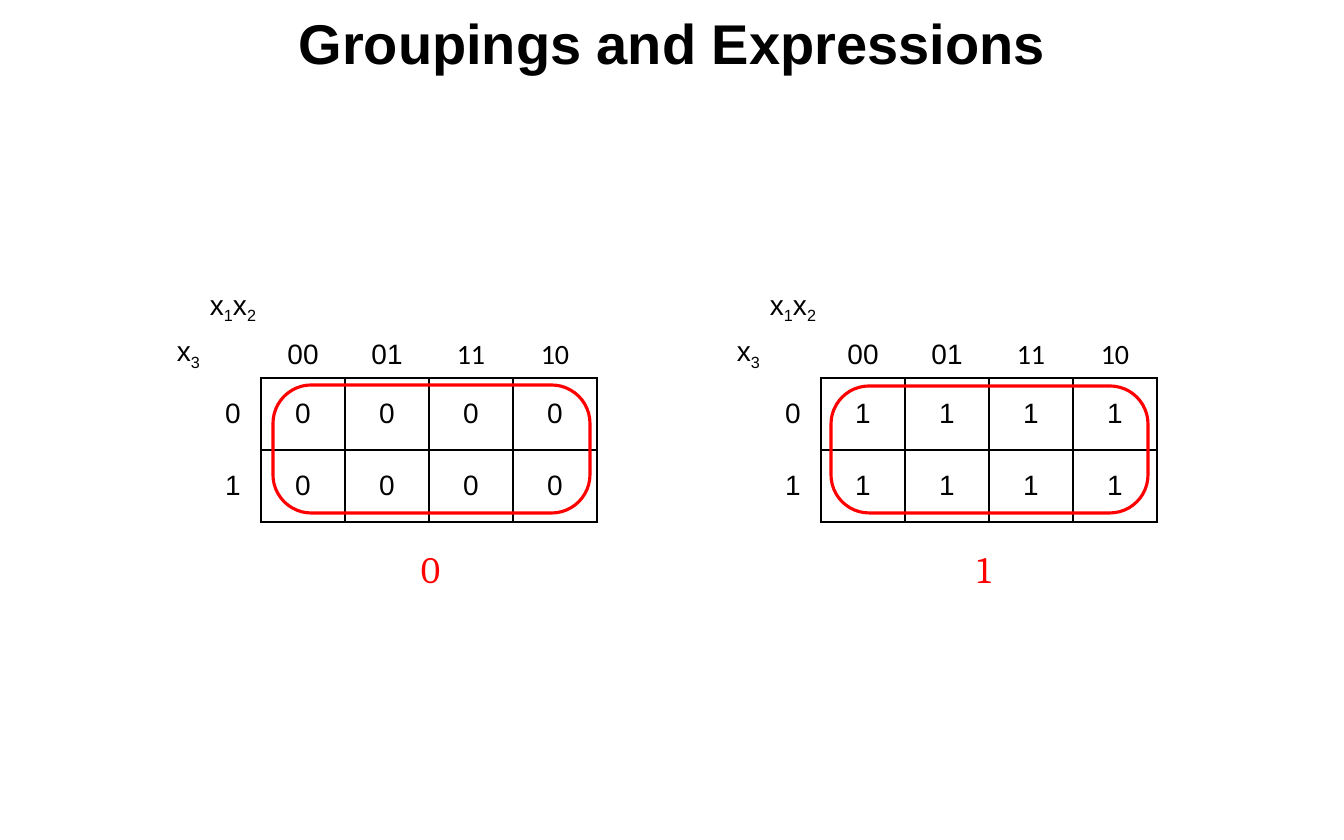
"""Build the slide of two Karnaugh maps whose groupings cover every cell."""
import dataclasses
import typing

import lxml.etree
import pptx
import pptx.dml.color
import pptx.enum.shapes
import pptx.enum.text
import pptx.oxml.ns
import pptx.util

SCALE = 914400 / 112
BLACK = pptx.dml.color.RGBColor(0, 0, 0)
WHITE = pptx.dml.color.RGBColor(255, 255, 255)
RED = pptx.dml.color.RGBColor(255, 0, 0)
CENTER = pptx.enum.text.PP_ALIGN.CENTER
MIDDLE = pptx.enum.text.MSO_ANCHOR.MIDDLE

COLUMN_WIDTHS = (56, 56, 84, 84, 84, 84)
ROW_HEIGHTS = (47, 47, 72, 72)
MAP_TOP = 284
FIRST_ROW = FIRST_COLUMN = 2
X3_INDENT = 23
NO_MARGINS = {"margin_left": 0, "margin_top": 0, "margin_right": 0, "margin_bottom": 0}
NEIGHBOURS = {"lnL": (0, -1), "lnR": (0, 1), "lnT": (-1, 0), "lnB": (1, 0)}


class Box(typing.NamedTuple):
    """Hold a position and size in px."""
    left: int
    top: int
    width: int
    height: int


@dataclasses.dataclass(frozen=True)
class KarnaughMap:
    """Describe a map filled with one value, its grouping and its expression."""
    value: str
    left: int
    grouping: Box
    expression: Box


MAPS = (
    KarnaughMap("0", 149, Box(273, 385, 317, 128), Box(410, 541, 41, 57)),
    KarnaughMap("1", 709, Box(831, 386, 317, 127), Box(966, 541, 41, 57)),
)


def px(length: int) -> pptx.util.Emu:
    """Turn px into EMU."""
    return pptx.util.Emu(round(length * SCALE))


def apply(target: typing.Any, values: dict[str, typing.Any]) -> None:
    """Set every attribute named in the format values."""
    for name, value in values.items():
        setattr(target, name, value)


def add_run(paragraph: typing.Any, text: str, font_name: str, points: int,
            color: pptx.dml.color.RGBColor, bold: bool = False) -> typing.Any:
    """Append a formatted run."""
    run = paragraph.add_run()
    run.text = text
    apply(run.font, {"name": font_name, "size": pptx.util.Pt(points), "bold": bold})
    run.font.color.rgb = color
    return run


def add_label(paragraph: typing.Any, label: str, font_name: str) -> None:
    """Write a cell label, lowering the digits of variable names."""
    is_variable = label.startswith("x")
    for part in label if is_variable else (label,):
        run = add_run(paragraph, part, font_name, 18, BLACK)
        if is_variable and part.isdigit():
            run.font._element.set("baseline", "-25000")


def is_value_cell(row: int, column: int) -> bool:
    """Tell whether a place lies inside the framed value grid."""
    return (FIRST_ROW <= row < len(ROW_HEIGHTS)
            and FIRST_COLUMN <= column < len(COLUMN_WIDTHS))


def add_borders(cell: typing.Any, row: int, column: int) -> None:
    """Draw black edges around value cells and white edges elsewhere."""
    properties = cell._tc.get_or_add_tcPr()
    for tag, (row_step, column_step) in NEIGHBOURS.items():
        neighbour = (row + row_step, column + column_step)
        framed = is_value_cell(row, column) or is_value_cell(*neighbour)
        points = 3 if {row, neighbour[0]} == {0, 1} else 1
        line = lxml.etree.SubElement(properties, pptx.oxml.ns.qn(f"a:{tag}"),
                                     w=str(pptx.util.Pt(points)))
        fill = lxml.etree.SubElement(line, pptx.oxml.ns.qn("a:solidFill"))
        lxml.etree.SubElement(fill, pptx.oxml.ns.qn("a:srgbClr"),
                              val=str(BLACK if framed else WHITE))


def add_map_table(slide: typing.Any, karnaugh_map: KarnaughMap) -> None:
    """Add the table with variable names, codes and values."""
    labels = (
        ("", "x1x2", "", "", "", ""),
        ("x3", "", "00", "01", "11", "10"),
        ("", "0", *karnaugh_map.value * 4),
        ("", "1", *karnaugh_map.value * 4),
    )
    box = Box(karnaugh_map.left, MAP_TOP, sum(COLUMN_WIDTHS), sum(ROW_HEIGHTS))
    table = slide.shapes.add_table(len(ROW_HEIGHTS), len(COLUMN_WIDTHS),
                                   *map(px, box)).table
    apply(table, {"first_row": False, "horz_banding": False})
    for column, width in zip(table.columns, COLUMN_WIDTHS):
        column.width = px(width)
    for row, height in zip(table.rows, ROW_HEIGHTS):
        row.height = px(height)
    for row_index, row_labels in enumerate(labels):
        for column_index, label in enumerate(row_labels):
            cell = table.cell(row_index, column_index)
            apply(cell, {**NO_MARGINS, "vertical_anchor": MIDDLE})
            if label == "x3":
                cell.margin_left = px(X3_INDENT)
            add_borders(cell, row_index, column_index)
            cell.fill.solid()
            cell.fill.fore_color.rgb = WHITE
            paragraph = cell.text_frame.paragraphs[0]
            paragraph.alignment = CENTER
            if label:
                add_label(paragraph, label, "Calibri" if label in ("11", "10") else "Arial")


def add_expression(slide: typing.Any, karnaugh_map: KarnaughMap) -> None:
    """Add the simplified expression below the map."""
    text_frame = slide.shapes.add_textbox(*map(px, karnaugh_map.expression)).text_frame
    apply(text_frame, {"word_wrap": False,
                       "auto_size": pptx.enum.text.MSO_AUTO_SIZE.SHAPE_TO_FIT_TEXT})
    add_run(text_frame.paragraphs[0], karnaugh_map.value, "Cambria", 24, RED)


def add_grouping(slide: typing.Any, box: Box) -> None:
    """Add the rounded red outline around the grouped cells."""
    shape = slide.shapes.add_shape(pptx.enum.shapes.MSO_SHAPE.ROUNDED_RECTANGLE,
                                   *map(px, box))
    shape.adjustments[0] = 0.3
    shape.shadow.inherit = False
    shape.fill.background()
    shape.line.color.rgb = RED
    shape.line.width = pptx.util.Pt(2)


def add_title(slide: typing.Any, text: str) -> None:
    """Place and write the slide title."""
    title = slide.shapes.title
    apply(title, dict(zip(Box._fields, map(px, Box(112, 0, 1120, 84)))))
    title.text_frame.vertical_anchor = MIDDLE
    paragraph = title.text_frame.paragraphs[0]
    paragraph.alignment = CENTER
    add_run(paragraph, text, "Arial", 36, BLACK, bold=True)


def main() -> None:
    """Build and save the presentation."""
    presentation = pptx.Presentation()
    apply(presentation, {"slide_width": px(1344), "slide_height": px(840)})
    slide = presentation.slides.add_slide(presentation.slide_layouts[5])
    add_title(slide, "Groupings and Expressions")
    for karnaugh_map in MAPS:
        add_map_table(slide, karnaugh_map)
        add_expression(slide, karnaugh_map)
        add_grouping(slide, karnaugh_map.grouping)
    presentation.save("out.pptx")


if __name__ == "__main__":
    main()
